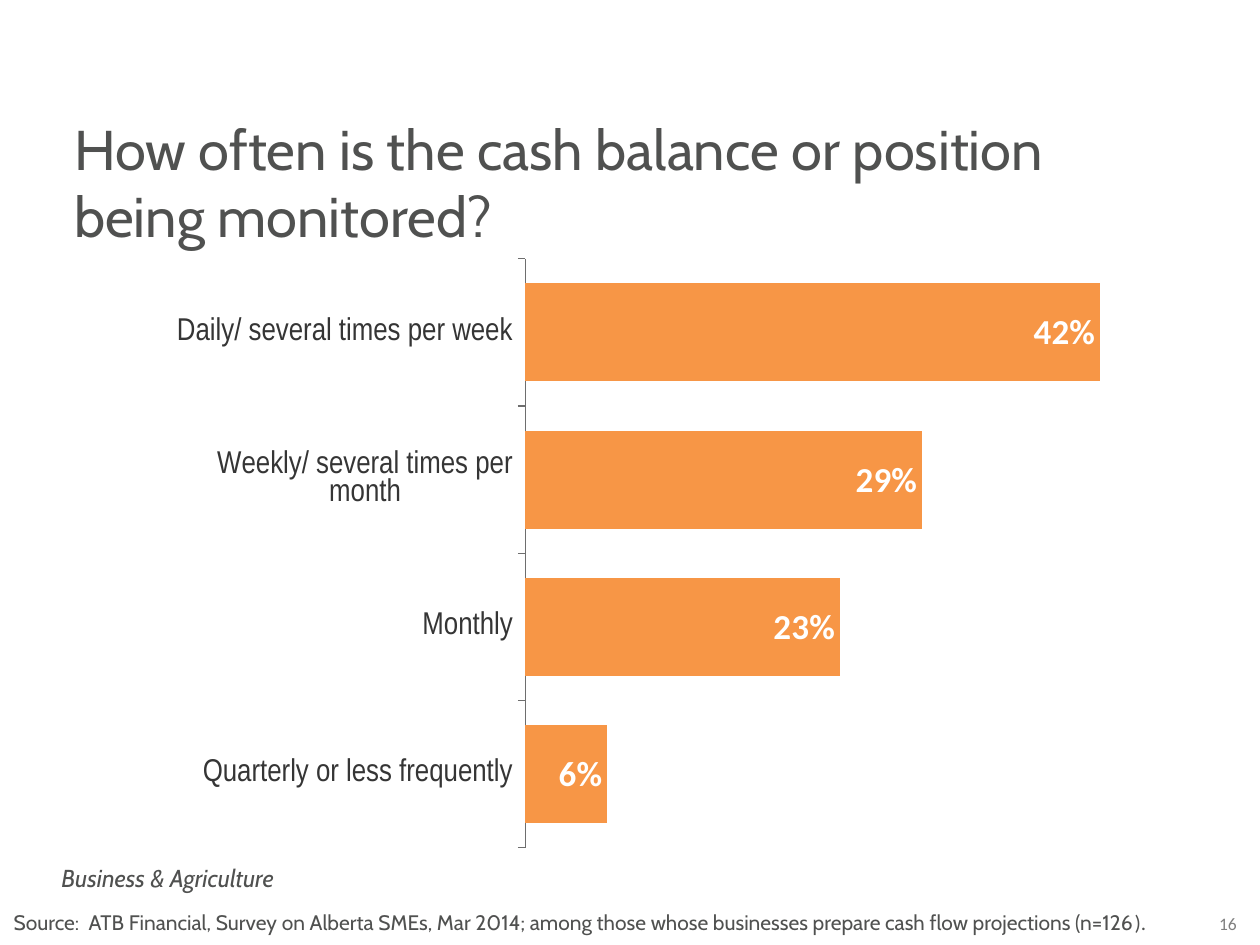
from dataclasses import dataclass

from lxml import etree
from pptx import Presentation
from pptx.chart.data import CategoryChartData
from pptx.dml.color import RGBColor
from pptx.enum.chart import XL_CHART_TYPE, XL_LABEL_POSITION, XL_TICK_MARK
from pptx.enum.text import PP_ALIGN
from pptx.oxml.ns import qn
from pptx.util import Pt

STACKED_BAR = XL_CHART_TYPE.BAR_STACKED
INSIDE_END = XL_LABEL_POSITION.INSIDE_END
TICK_OUTSIDE = XL_TICK_MARK.OUTSIDE
LEFT, CENTER = PP_ALIGN.LEFT, PP_ALIGN.CENTER

INK = RGBColor(0x50, 0x51, 0x50)
CHART_INK = RGBColor(0x35, 0x35, 0x35)
GREY = RGBColor(0x80, 0x80, 0x80)
AXIS_GREY = RGBColor(0x6E, 0x6E, 0x6E)
ORANGE = RGBColor(0xF7, 0x96, 0x46)
WHITE = RGBColor(0xFF, 0xFF, 0xFF)

HEADING_FONT, NUMBER_FONT, AXIS_FONT = "Cabin", "Calibri", "Arial Narrow"


@dataclass(frozen=True)
class Box:
    left: float
    top: float
    width: float
    height: float

    def in_points(self) -> tuple:
        return Pt(self.left), Pt(self.top), Pt(self.width), Pt(self.height)


@dataclass(frozen=True)
class Frequency:
    label: str
    share: float


# Bars run from bottom to top
FREQUENCIES = [
    Frequency("Quarterly or less frequently", 0.06),
    Frequency("Monthly", 0.23),
    Frequency("Weekly/ several times per month", 0.29),
    Frequency("Daily/ several times per week", 0.42),
]


def style_font(font, name: str, size: float, color: RGBColor,
               bold: bool = False, italic: bool = False) -> None:
    font.name, font.size = name, Pt(size)
    font.bold, font.italic = bold, italic
    font.color.rgb = color


def add_text(slide, box: Box, text: str, *, size: float, font: str = HEADING_FONT,
             color: RGBColor = INK, italic: bool = False, align=LEFT):
    frame = slide.shapes.add_textbox(*box.in_points()).text_frame
    frame.word_wrap = True
    paragraph = frame.paragraphs[0]
    paragraph.alignment = align
    run = paragraph.add_run()
    run.text = text
    style_font(run.font, font, size, color, italic=italic)
    return paragraph


def set_plot_layout(chart, x: float, y: float, w: float, h: float) -> None:
    plot_area = chart._chartSpace.chart.plotArea
    for old in plot_area.findall(qn("c:layout")):
        plot_area.remove(old)
    layout = etree.Element(qn("c:layout"))
    manual = etree.SubElement(layout, qn("c:manualLayout"))
    settings = {"layoutTarget": "inner", "xMode": "edge", "yMode": "edge",
                "x": x, "y": y, "w": w, "h": h}
    for tag, value in settings.items():
        etree.SubElement(manual, qn(f"c:{tag}")).set("val", str(value))
    plot_area.insert(0, layout)


def add_frequency_chart(slide, box: Box, frequencies: list[Frequency]) -> None:
    shares = CategoryChartData(number_format="0%")
    shares.categories = [frequency.label for frequency in frequencies]
    shares.add_series("Series 1", [frequency.share for frequency in frequencies])
    chart = slide.shapes.add_chart(STACKED_BAR, *box.in_points(), shares).chart
    chart.has_legend = False
    chart.has_title = False
    style_font(chart.font, HEADING_FONT, 14, CHART_INK, bold=True)
    set_plot_layout(chart, 0.373, 0.052, 0.627, 0.92)

    # Axes
    frequency_axis, share_axis = chart.category_axis, chart.value_axis
    frequency_axis.major_tick_mark = TICK_OUTSIDE
    frequency_axis.format.line.color.rgb = AXIS_GREY
    style_font(frequency_axis.tick_labels.font, AXIS_FONT, 18, CHART_INK)
    share_axis.minimum_scale, share_axis.maximum_scale = 0, 0.45
    share_axis.has_major_gridlines = False
    share_axis.visible = False

    # Bars and their labels
    bars = chart.plots[0]
    bars.gap_width, bars.overlap = 50, 100
    bars.vary_by_categories = False
    fill = bars.series[0].format.fill
    fill.solid()
    fill.fore_color.rgb = ORANGE
    labels = bars.series[0].data_labels
    labels.show_value = True
    labels.position = INSIDE_END
    labels.number_format, labels.number_format_is_linked = "0%", False
    style_font(labels.font, NUMBER_FONT, 20, WHITE, bold=True)


def main() -> None:
    presentation = Presentation()
    presentation.slide_width, presentation.slide_height = Pt(720), Pt(540)
    slide = presentation.slides.add_slide(presentation.slide_layouts[6])

    # Page furniture
    add_text(slide, Box(684, 518.4, 35.3, 19.4), "16", size=10,
             font=NUMBER_FONT, color=GREY, align=CENTER)
    add_text(slide, Box(28, 489.6, 202.3, 24.5), "Business & Agriculture",
             size=14, italic=True)

    # Question and answers
    add_text(slide, Box(35.3, 62, 635.8, 85),
             "How often is the cash balance or position being monitored?", size=32)
    add_frequency_chart(slide, Box(90.7, 128.9, 561.6, 365.8), FREQUENCIES)

    # Source line
    source = add_text(
        slide, Box(0.7, 516.2, 670.3, 21.6),
        "Source:  ATB Financial, Survey on Alberta SMEs, Mar 2014; among those "
        "whose businesses prepare cash flow projections (n=126", size=12)
    ending = source.add_run()
    ending.text = ")."
    style_font(ending.font, NUMBER_FONT, 12, INK)

    presentation.save("out.pptx")


if __name__ == "__main__":
    main()
